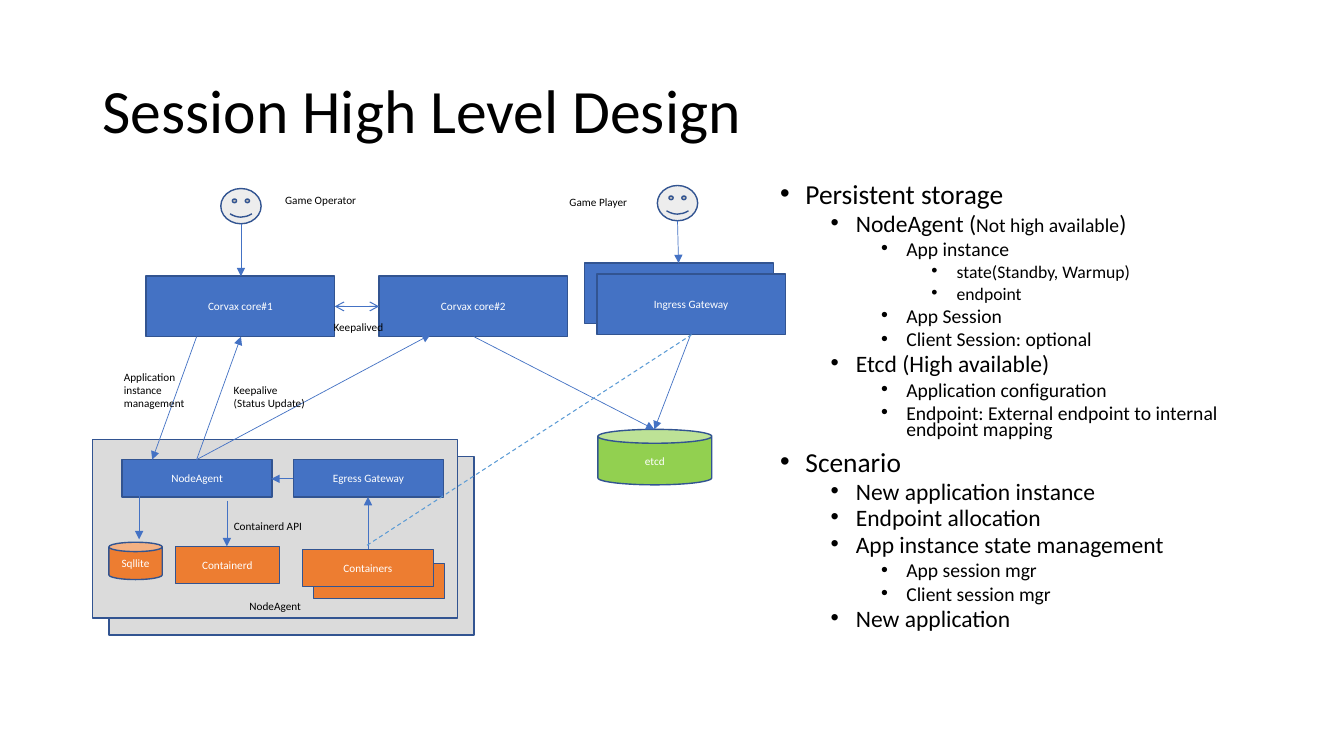
import lxml.etree
import pptx
import pptx.dml.color
import pptx.enum.dml
import pptx.enum.shapes
import pptx.enum.text
import pptx.oxml.ns
import pptx.util

PX = 9144
FONT = "Calibri"
COLORS = {
    "blue": "4472C4",
    "outline": "325491",
    "gray": "DBDBDB",
    "face": "EDEDED",
    "orange": "ED7D31",
    "green": "92D050",
    "dashed": "5B9BD5",
    "black": "000000",
    "white": "FFFFFF",
}
SHAPE = pptx.enum.shapes.MSO_SHAPE
ANCHOR = pptx.enum.text.MSO_ANCHOR
ALIGN = pptx.enum.text.PP_ALIGN
LEVEL_SIZES = [19.6, 16.8, 14, 12.6]

CORE_SIZE = (187, 60)
AGENT_SIZE = (362, 177)
AGENT_PART_SIZE = (149, 37)
FACE_SIZE = (40, 35)

BOXES = [
    (SHAPE.RECTANGLE, (580, 261), CORE_SIZE, "blue", ""),
    (SHAPE.RECTANGLE, (592, 272), CORE_SIZE, "blue", "Ingress Gateway"),
    (SHAPE.RECTANGLE, (145, 274), CORE_SIZE, "blue", "Corvax core#1"),
    (SHAPE.RECTANGLE, (376, 274), CORE_SIZE, "blue", "Corvax core#2"),
    (SHAPE.RECTANGLE, (108, 453), AGENT_SIZE, "gray", ""),
    (SHAPE.RECTANGLE, (92, 436), AGENT_SIZE, "gray", "NodeAgent"),
    (SHAPE.RECTANGLE, (121, 456), AGENT_PART_SIZE, "blue", "NodeAgent"),
    (SHAPE.RECTANGLE, (291, 456), AGENT_PART_SIZE, "blue", "Egress Gateway"),
    (SHAPE.RECTANGLE, (174, 542), (103, 37), "orange", "Containerd"),
    (SHAPE.RECTANGLE, (311, 559), (130, 35), "orange", ""),
    (SHAPE.RECTANGLE, (300, 545), (130, 37), "orange", "Containers"),
    (SHAPE.CAN, (593, 426), (113, 55), "green", "etcd"),
    (SHAPE.CAN, (108, 538), (53, 37), "orange", "Sqllite"),
    (SHAPE.SMILEY_FACE, (219, 187), FACE_SIZE, "face", ""),
    (SHAPE.SMILEY_FACE, (652, 184), FACE_SIZE, "face", ""),
]

ARROWS = [
    ((195, 334), (151, 456)),
    ((195, 456), (239, 334)),
    ((195, 456), (427, 332)),
    ((365, 545), (365, 493)),
    ((291, 475), (269, 475)),
    ((225, 497), (225, 542)),
    ((138, 490), (138, 535)),
    ((685, 332), (649, 426)),
    ((470, 334), (649, 426)),
    ((239, 222), (239, 274)),
    ((672, 219), (673, 261)),
]

LABELS = [
    ((113, 362, 80, 50), ["Application instance management"]),
    ((222, 375, 113, 37), ["Keepalive", "(Status Update)"]),
    ((321, 313, 94, 24), ["Keepalived"]),
    ((273, 187, 93, 24), ["Game Operator"]),
    ((555, 189, 93, 24), ["Game Player"]),
    ((222, 510, 99, 24), ["Containerd API"]),
]

OUTLINE = [
    (0, "Persistent storage"),
    (1, [("NodeAgent (", 16.8), ("Not high available", 14), (")", 16.8)]),
    (2, "App instance"),
    (3, "state(Standby, Warmup)"),
    (3, "endpoint"),
    (2, "App Session"),
    (2, "Client Session: optional"),
    (1, "Etcd (High available)"),
    (2, "Application configuration"),
    (2, "Endpoint: External endpoint to internal endpoint mapping"),
    (0, "Scenario"),
    (1, "New application instance"),
    (1, "Endpoint allocation"),
    (1, "App instance state management"),
    (2, "App session mgr"),
    (2, "Client session mgr"),
    (1, "New application"),
]


def px(*lengths):
    return [length * PX for length in lengths]


def rgb(name):
    return pptx.dml.color.RGBColor.from_string(COLORS[name])


def set_font(font, size, color="black"):
    font.name = FONT
    font.size = pptx.util.Pt(size)
    font.color.rgb = rgb(color)


def add_child(parent, tag, **attributes):
    child = lxml.etree.SubElement(parent, pptx.oxml.ns.qn(tag))
    for key, value in attributes.items():
        child.set(key, value)


def add_box(slide, kind, corner, size, fill, caption):
    box = slide.shapes.add_shape(kind, *px(*corner, *size))
    box.shadow.inherit = False
    box.fill.solid()
    box.fill.fore_color.rgb = rgb(fill)
    box.line.color.rgb = rgb("outline")
    box.line.width = pptx.util.Pt(1)
    if caption:
        on_gray = fill == "gray"
        frame = box.text_frame
        frame.vertical_anchor = ANCHOR.BOTTOM if on_gray else ANCHOR.MIDDLE
        paragraph = frame.paragraphs[0]
        paragraph.text = caption
        paragraph.alignment = ALIGN.CENTER
        set_font(paragraph.font, 8, "black" if on_gray else "white")


def add_line(slide, start, end, color="blue", width=0.5, head=None, tail=None, dash=None):
    line = slide.shapes.add_connector(
        pptx.enum.shapes.MSO_CONNECTOR.STRAIGHT, *px(*start, *end))
    line.line.color.rgb = rgb(color)
    line.line.width = pptx.util.Pt(width)
    if dash:
        line.line.dash_style = dash
    outline = line.line._get_or_add_ln()
    if head:
        add_child(outline, "a:headEnd", type=head)
    if tail:
        add_child(outline, "a:tailEnd", type=tail)
    add_child(line._element.spPr, "a:effectLst")


def add_text(slide, area, texts, size=8):
    frame = slide.shapes.add_textbox(*px(*area)).text_frame
    frame.word_wrap = True
    frame.text = "\n".join(texts)
    for paragraph in frame.paragraphs:
        set_font(paragraph.font, size)
    return frame


def add_outline(slide, area, items):
    frame = slide.shapes.add_textbox(*px(*area)).text_frame
    frame.word_wrap = True
    for index, (level, content) in enumerate(items):
        paragraph = frame.add_paragraph() if index else frame.paragraphs[0]
        paragraph.level = level
        paragraph.line_spacing = 0.7
        paragraph.space_before = pptx.util.Pt(5 if level else 10)
        properties = paragraph._p.get_or_add_pPr()
        properties.set("marL", str((25 + 50 * level) * PX))
        properties.set("indent", str(-25 * PX))
        add_child(properties, "a:buFont", typeface="Arial")
        add_child(properties, "a:buChar", char="•")
        if isinstance(content, str):
            paragraph.text = content
            set_font(paragraph.font, LEVEL_SIZES[level])
        else:
            for text, size in content:
                run = paragraph.add_run()
                run.text = text
                set_font(run.font, size)


def main():
    deck = pptx.Presentation()
    deck.slide_width, deck.slide_height = px(1333, 750)
    slide = deck.slides.add_slide(deck.slide_layouts[6])

    title = add_text(slide, (92, 40, 1150, 145), ["Session High Level Design"], 44)
    title.vertical_anchor = ANCHOR.MIDDLE
    title.paragraphs[0].line_spacing = 0.9
    add_outline(slide, (764, 180, 501, 476), OUTLINE)

    for box in BOXES:
        add_box(slide, *box)
    for start, end in ARROWS:
        add_line(slide, start, end, tail="triangle")
    add_line(slide, (332, 304), (376, 304), width=0.75, head="arrow", tail="arrow")
    add_line(slide, (686, 332), (364, 541), "dashed", 0.75,
             dash=pptx.enum.dml.MSO_LINE.DASH)
    for area, texts in LABELS:
        add_text(slide, area, texts)

    deck.save("out.pptx")


if __name__ == "__main__":
    main()
